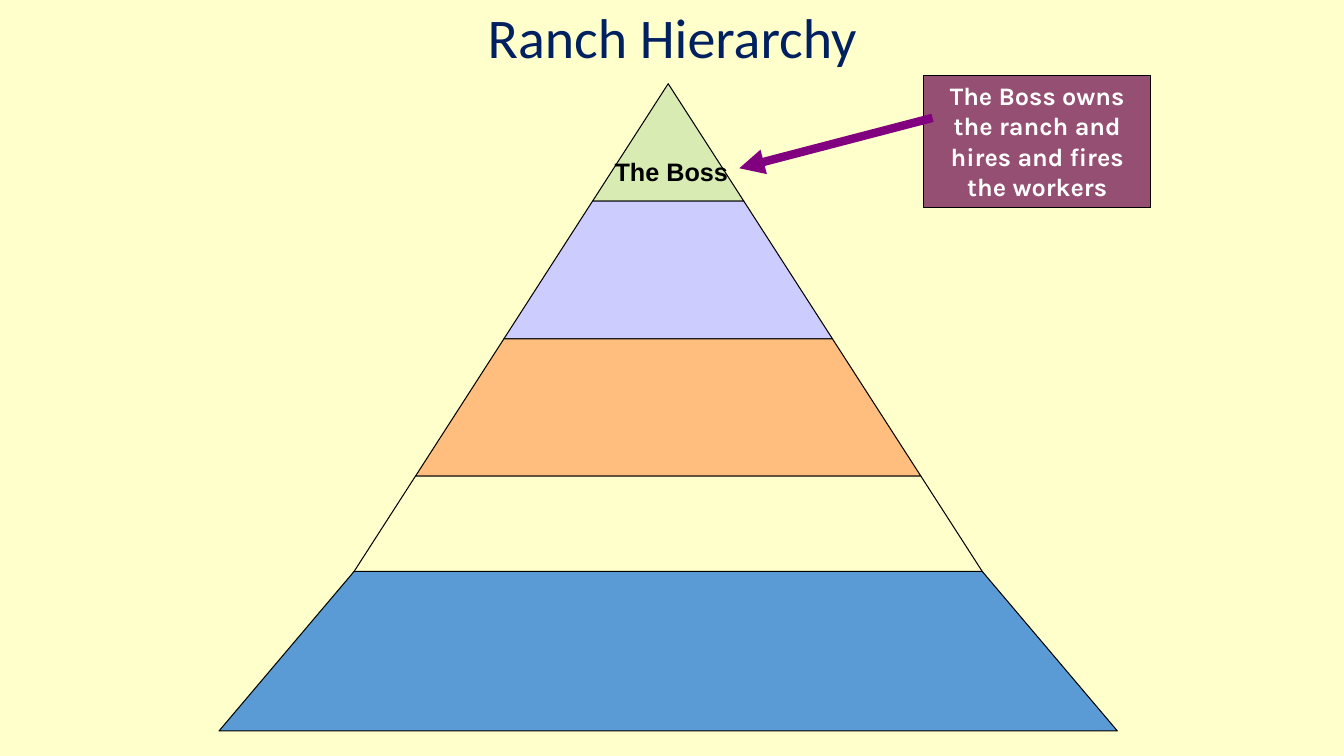
import pptx
import pptx.dml.color
import pptx.enum.shapes
import pptx.enum.text
import pptx.oxml.ns
import pptx.util
from lxml import etree
from pptx.util import Cm

COLORS = {
    "background": "FFFFCC",
    "title": "002060",
    "boss": "D8EBB3",
    "lavender": "CCCCFF",
    "orange": "FFBE7D",
    "blue": "5B9BD5",
    "callout": "954F72",
    "arrow": "800080",
    "black": "000000",
    "white": "FFFFFF",
}
CENTER = 16.84
APEX = 2.11
SLOPE = 0.644


class HierarchySlide:
    """Draw styled elements on the current slide, with lengths in centimetres."""

    def __init__(self, slide):
        self.slide = slide
        self.fill(slide.background, "background")

    def color(self, name):
        return pptx.dml.color.RGBColor.from_string(COLORS[name])

    def fill(self, target, name):
        target.fill.solid()
        target.fill.fore_color.rgb = self.color(name)

    def style(self, shape, name):
        self.fill(shape, name)
        shape.line.color.rgb = self.color("black")
        shape.line.width = pptx.util.Pt(0.75)
        shape.shadow.inherit = False

    def label(self, shape, text, font, size, color, bold=False, centered=True, middle=False):
        anchor = pptx.enum.text.MSO_ANCHOR
        align = pptx.enum.text.PP_ALIGN
        frame = shape.text_frame
        frame.word_wrap = True
        frame.vertical_anchor = anchor.MIDDLE if middle else anchor.TOP
        frame.text = text
        paragraph = frame.paragraphs[0]
        paragraph.alignment = align.CENTER if centered else align.LEFT
        for run in paragraph.runs:
            run.font.name = font
            run.font.size = pptx.util.Pt(size)
            run.font.bold = bold
            run.font.color.rgb = self.color(color)

    def text(self, left, top, width, height, text, font, size, color, **options):
        box = self.slide.shapes.add_textbox(Cm(left), Cm(top), Cm(width), Cm(height))
        self.label(box, text, font, size, color, **options)

    def callout(self, left, top, width, height, text):
        rectangle = self.slide.shapes.add_shape(
            pptx.enum.shapes.MSO_SHAPE.RECTANGLE, Cm(left), Cm(top), Cm(width), Cm(height))
        self.style(rectangle, "callout")
        self.label(rectangle, text, "Karla", 18, "white", bold=True)

    def tier(self, top, bottom, color, bottom_half=None):
        top_half = SLOPE * (top - APEX)
        bottom_half = bottom_half or SLOPE * (bottom - APEX)
        corners = [(CENTER - top_half, top), (CENTER + top_half, top),
                   (CENTER + bottom_half, bottom), (CENTER - bottom_half, bottom)]
        points = [(Cm(x), Cm(y)) for x, y in dict.fromkeys(corners)]
        builder = self.slide.shapes.build_freeform(*points[0])
        builder.add_line_segments(points[1:], close=True)
        self.style(builder.convert_to_shape(), color)

    def arrow(self, start_x, start_y, end_x, end_y, color, width):
        connector = self.slide.shapes.add_connector(
            pptx.enum.shapes.MSO_CONNECTOR.STRAIGHT,
            Cm(start_x), Cm(start_y), Cm(end_x), Cm(end_y))
        connector.line.color.rgb = self.color(color)
        connector.line.width = pptx.util.Pt(width)
        qualify = pptx.oxml.ns.qn
        properties = connector.element.spPr
        etree.SubElement(properties.find(qualify("a:ln")), qualify("a:tailEnd"), type="triangle")
        etree.SubElement(properties, qualify("a:effectLst"))


def main():
    presentation = pptx.Presentation()
    presentation.slide_width = Cm(33.87)
    presentation.slide_height = Cm(19.05)
    page = HierarchySlide(presentation.slides.add_slide(presentation.slide_layouts[6]))

    levels = [APEX, 5.07, 8.54, 12.0, 15.45]
    tier_colors = ["boss", "lavender", "orange", "background"]
    for top, bottom, color in zip(levels, levels[1:], tier_colors):
        page.tier(top, bottom, color)

    page.text(5.51, 0.03, 22.86, 1.78, "Ranch Hierarchy", "Calibri", 40, "title", middle=True)
    page.text(15.24, 3.81, 3.6, 1.02, "The Boss", "Arial", 18, "black", bold=True, centered=False)
    page.tier(14.4, 18.42, "blue", bottom_half=11.32)
    page.callout(23.28, 1.9, 5.72, 3.33,
                 "The Boss owns the ranch and hires and fires the workers")
    page.arrow(23.5, 2.97, 18.63, 4.24, "arrow", 6)
    presentation.save("out.pptx")


if __name__ == "__main__":
    main()
